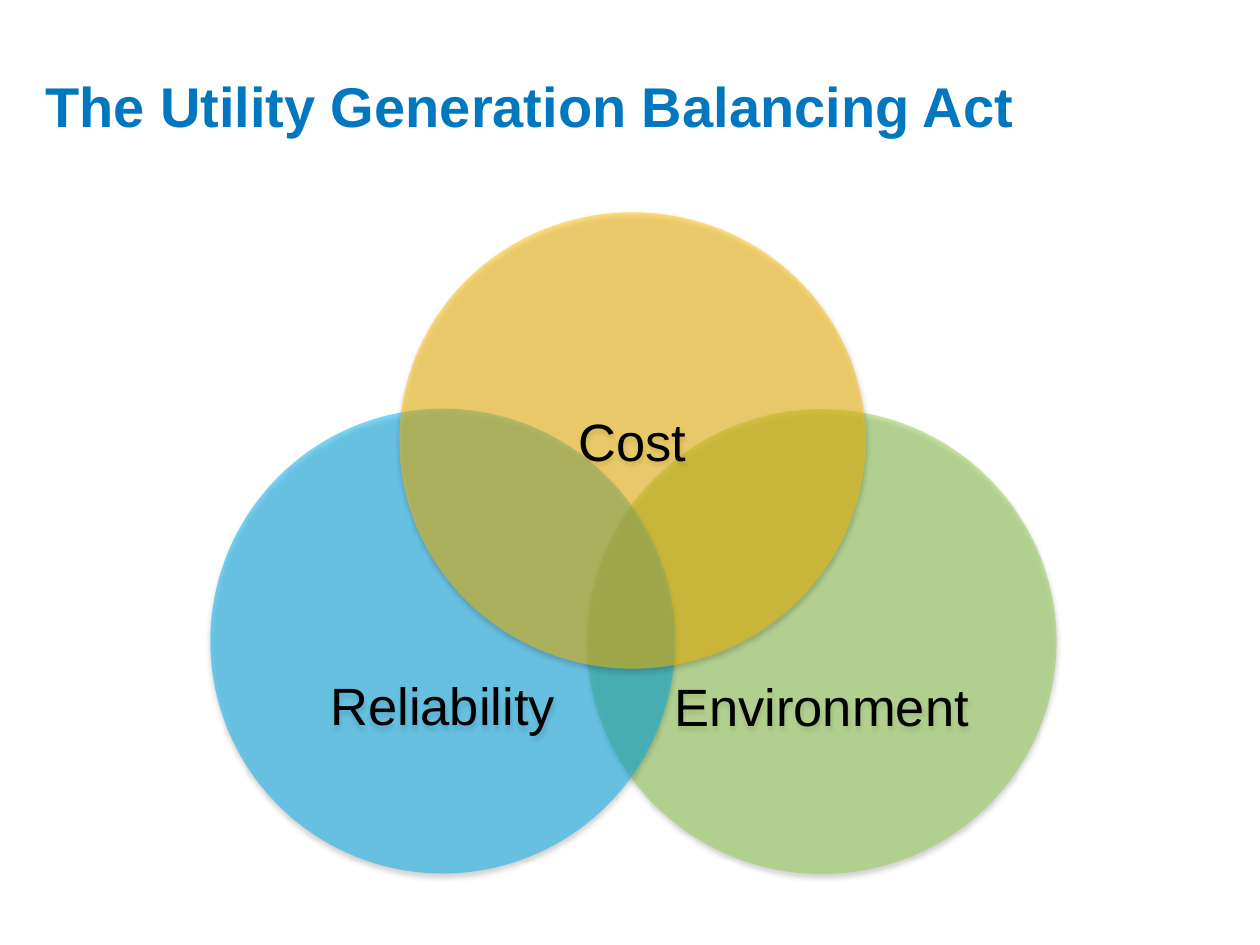
import pptx
import pptx.dml.color
import pptx.enum.shapes
import pptx.enum.text
import pptx.oxml
import pptx.oxml.ns
import pptx.util

Cm = pptx.util.Cm
Pt = pptx.util.Pt
NS = pptx.oxml.ns.nsdecls("a")

# Content: label, left, top, width, height (cm), colour, text drop (cm)
TITLE = "The Utility Generation Balancing Act"
CIRCLES = [
    ("Environment", 11.83, 8.25, 9.47, 9.37, "92D050", 2.57),
    ("Reliability", 4.24, 8.24, 9.37, 9.37, "00B0F0", 2.57),
    ("Cost", 8.05, 4.28, 9.4, 9.2, "FFC000", 0),
]
INSET = 0.13
SHADOW = (
    f'<a:outerShdw {NS} blurRad="40000" dist="23000" dir="5400000" rotWithShape="0">'
    '<a:srgbClr val="000000"><a:alpha val="35000"/></a:srgbClr></a:outerShdw>'
)


def color(code):
    return pptx.dml.color.RGBColor.from_string(code)


def write(para, text, size, code, bold=False):
    run = para.add_run()
    run.text = text
    font = run.font
    font.name = "Arial"
    font.size = Pt(size)
    font.bold = bold
    font.color.rgb = color(code)


def circle(slide, label, left, top, width, height, code, drop):
    disc = slide.shapes.add_shape(
        pptx.enum.shapes.MSO_SHAPE.OVAL, Cm(left), Cm(top), Cm(width), Cm(height))
    disc.line.fill.background()

    # Half-clear fill
    disc.fill.solid()
    disc.fill.fore_color.rgb = color(code)
    tint = disc.fill._xPr.find(".//" + pptx.oxml.ns.qn("a:srgbClr"))
    tint.append(pptx.oxml.parse_xml(f'<a:alpha {NS} val="50000"/>'))

    # Soft shadow below
    disc.shadow.inherit = False
    effect = disc._element.spPr.find(pptx.oxml.ns.qn("a:effectLst"))
    effect.append(pptx.oxml.parse_xml(SHADOW))

    # Label, pushed down by a larger top inset
    frame = disc.text_frame
    frame.word_wrap = True
    frame.vertical_anchor = pptx.enum.text.MSO_ANCHOR.MIDDLE
    frame.margin_top = Cm(INSET + drop)
    frame.margin_bottom = Cm(INSET)
    para = frame.paragraphs[0]
    para.alignment = pptx.enum.text.PP_ALIGN.CENTER
    write(para, label, 30, "000000")


def main():
    deck = pptx.Presentation()
    deck.slide_width = Cm(25.4)
    deck.slide_height = Cm(19.05)
    slide = deck.slides.add_slide(deck.slide_layouts[6])

    # Title
    box = slide.shapes.add_textbox(Cm(0.66), Cm(1.32), Cm(22.33), Cm(1.63))
    box.text_frame.word_wrap = True
    box.text_frame.auto_size = pptx.enum.text.MSO_AUTO_SIZE.SHAPE_TO_FIT_TEXT
    write(box.text_frame.paragraphs[0], TITLE, 32, "0077BE", True)

    # Overlapping circles, back to front
    for item in CIRCLES:
        circle(slide, *item)

    deck.save("out.pptx")


if __name__ == "__main__":
    main()
